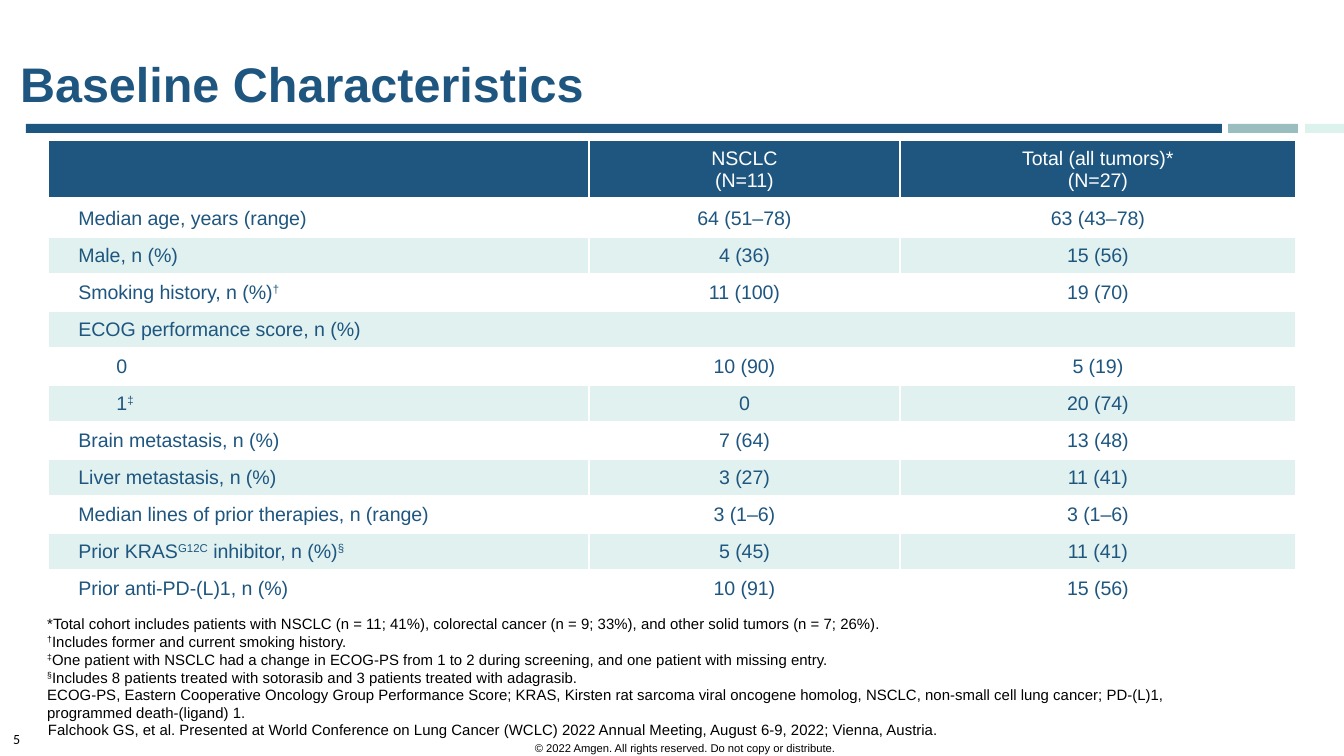
"""Build the Baseline Characteristics slide with its table and footnotes."""
from lxml.etree import SubElement
from pptx import Presentation
from pptx.dml.color import RGBColor
from pptx.enum.shapes import MSO_SHAPE
from pptx.enum.text import MSO_ANCHOR, MSO_AUTO_SIZE, PP_ALIGN
from pptx.oxml.ns import qn
from pptx.util import Pt

COLORS = {
    "navy": "1E5680", "bar": "1D5680", "teal": "377D83", "mint": "7BCBBA",
    "band": "E1F1EF", "white": "FFFFFF", "black": "000000",
}
TITLE = "Baseline Characteristics"
HEADER = ("", "NSCLC\n(N=11)", "Total (all tumors)*\n(N=27)")
# Text between carets is raised.
ROWS = [
    ("Median age, years (range)", "64 (51–78)", "63 (43–78)"),
    ("Male, n (%)", "4 (36)", "15 (56)"),
    ("Smoking history, n (%)^†^", "11 (100)", "19 (70)"),
    ("ECOG performance score, n (%)",),
    ("0", "10 (90)", "5 (19)"),
    ("1^‡^", "0", "20 (74)"),
    ("Brain metastasis, n (%)", "7 (64)", "13 (48)"),
    ("Liver metastasis, n (%)", "3 (27)", "11 (41)"),
    ("Median lines of prior therapies, n (range)", "3 (1–6)", "3 (1–6)"),
    ("Prior KRAS^G12C^ inhibitor, n (%)^§^", "5 (45)", "11 (41)"),
    ("Prior anti-PD-(L)1, n (%)", "10 (91)", "15 (56)"),
]
SUB_ROWS = ("0", "1^‡^")
FOOTNOTES = (
    "*Total cohort includes patients with NSCLC (n = 11; 41%), colorectal cancer (n = 9; 33%), "
    "and other solid tumors (n = 7; 26%).\n"
    "^†^Includes former and current smoking history.\n"
    "^‡^One patient with NSCLC had a change in ECOG-PS from 1 to 2 during screening, "
    "and one patient with missing entry.\n"
    "^§^Includes 8 patients treated with sotorasib and 3 patients treated with adagrasib.\n"
    "ECOG-PS, Eastern Cooperative Oncology Group Performance Score; KRAS, Kirsten rat sarcoma "
    "viral oncogene homolog, NSCLC, non-small cell lung cancer; PD-(L)1, programmed "
    "death-(ligand) 1."
)
CITATION = (
    "Falchook GS, et al. Presented at World Conference on Lung Cancer (WCLC) 2022 Annual "
    "Meeting, August 6-9, 2022; Vienna, Austria."
)
COPYRIGHT = "© 2022 Amgen. All rights reserved. Do not copy or distribute."
BARS = [(26, 1196, "bar", 100), (1228, 70, "teal", 50), (1305, 39, "mint", 25)]
COLUMN_WIDTHS = (541, 311, 396)
HEADER_HEIGHT, ROW_HEIGHT = 60, 37
LABEL_INDENT, SUB_INDENT = 17, 55


def px(length):
    return round(length * 914400 / 134.4)


def rgb(name):
    return RGBColor.from_string(COLORS[name])


def write(frame, text, size, color="black", align=PP_ALIGN.LEFT, font="Arial", bold=False):
    frame.word_wrap = True
    for index, line in enumerate(text.split("\n")):
        para = frame.add_paragraph() if index else frame.paragraphs[0]
        para.alignment = align
        for position, part in enumerate(line.split("^")):
            if not part:
                continue
            span = para.add_run()
            span.text = part
            span.font.size, span.font.name, span.font.bold = Pt(size), font, bold
            span.font.color.rgb = rgb(color)
            if position % 2:
                span.font._element.set("baseline", "30000")


def add_text(page, place, text, size, **style):
    box = page.shapes.add_textbox(*map(px, place))
    write(box.text_frame, text, size, **style)
    box.text_frame.auto_size = MSO_AUTO_SIZE.SHAPE_TO_FIT_TEXT
    return box.text_frame


def add_bar(page, left, width, color, opacity):
    bar = page.shapes.add_shape(MSO_SHAPE.RECTANGLE, px(left), px(124), px(width), px(9))
    bar.shadow.inherit = False
    bar.line.fill.background()
    bar.fill.solid()
    bar.fill.fore_color.rgb = rgb(color)
    if opacity < 100:
        shade = bar.fill._xPr.find(".//" + qn("a:srgbClr"))
        SubElement(shade, qn("a:alpha"), val=str(opacity * 1000))


def style_cell(cell, fill, bottom):
    properties = cell._tc.get_or_add_tcPr()
    for side, width in (("lnL", 1), ("lnR", 1), ("lnT", 1), ("lnB", bottom)):
        line = SubElement(properties, qn("a:" + side), w=str(Pt(width)))
        solid = SubElement(line, qn("a:solidFill"))
        SubElement(solid, qn("a:srgbClr"), val=COLORS["white"])
    cell.fill.solid()
    cell.fill.fore_color.rgb = rgb(fill)
    cell.vertical_anchor = MSO_ANCHOR.MIDDLE


def add_characteristics(page):
    height = HEADER_HEIGHT + ROW_HEIGHT * len(ROWS)
    table = page.shapes.add_table(
        len(ROWS) + 1, len(COLUMN_WIDTHS), px(48), px(140), px(sum(COLUMN_WIDTHS)), px(height)
    ).table
    table.first_row = table.horz_banding = False
    for column, width in zip(table.columns, COLUMN_WIDTHS):
        column.width = px(width)
    for row_index, texts in enumerate([HEADER, *ROWS]):
        is_header = row_index == 0
        table.rows[row_index].height = px(HEADER_HEIGHT if is_header else ROW_HEIGHT)
        fill = "navy" if is_header else ("white", "band")[(row_index - 1) % 2]
        for column_index in range(len(COLUMN_WIDTHS)):
            style_cell(table.cell(row_index, column_index), fill, 3 if is_header else 1)
        if len(texts) == 1:
            table.cell(row_index, 0).merge(table.cell(row_index, len(COLUMN_WIDTHS) - 1))
        for column_index, text in enumerate(texts):
            cell = table.cell(row_index, column_index)
            align = PP_ALIGN.CENTER if column_index else PP_ALIGN.LEFT
            write(cell.text_frame, text, 10.5, "white" if is_header else "navy", align)
            if not column_index and not is_header:
                indent = SUB_INDENT if text in SUB_ROWS else LABEL_INDENT
                cell.text_frame.paragraphs[0]._p.get_or_add_pPr().set("marL", str(px(indent)))


def main():
    deck = Presentation()
    deck.slide_width, deck.slide_height = px(1344), px(756)
    page = deck.slides.add_slide(deck.slide_layouts[5])

    title = page.shapes.title
    title.left, title.top, title.width, title.height = map(px, (20, 46, 1288, 75))
    frame = title.text_frame
    write(frame, TITLE, 26, "navy", bold=True)
    frame.auto_size = MSO_AUTO_SIZE.NONE
    frame.vertical_anchor = MSO_ANCHOR.MIDDLE
    frame.margin_left = frame.margin_right = 0

    for bar in BARS:
        add_bar(page, *bar)
    add_characteristics(page)
    add_text(page, (0, 724, 67, 31), "5", 7.5, font="Calibri")
    footer = add_text(page, (301, 736, 768, 26), COPYRIGHT, 6, align=PP_ALIGN.CENTER)
    footer.paragraphs[0].line_spacing = 0.9
    add_text(page, (34, 608, 1224, 122), FOOTNOTES, 8)
    citation = add_text(page, (39, 715, 925, 62), CITATION, 8)
    citation.margin_left = citation.margin_right = px(9)
    citation.margin_top = citation.margin_bottom = px(9)
    citation.paragraphs[0].line_spacing = 0.9
    citation.paragraphs[0].space_after = Pt(3)
    deck.save("out.pptx")


if __name__ == "__main__":
    main()
